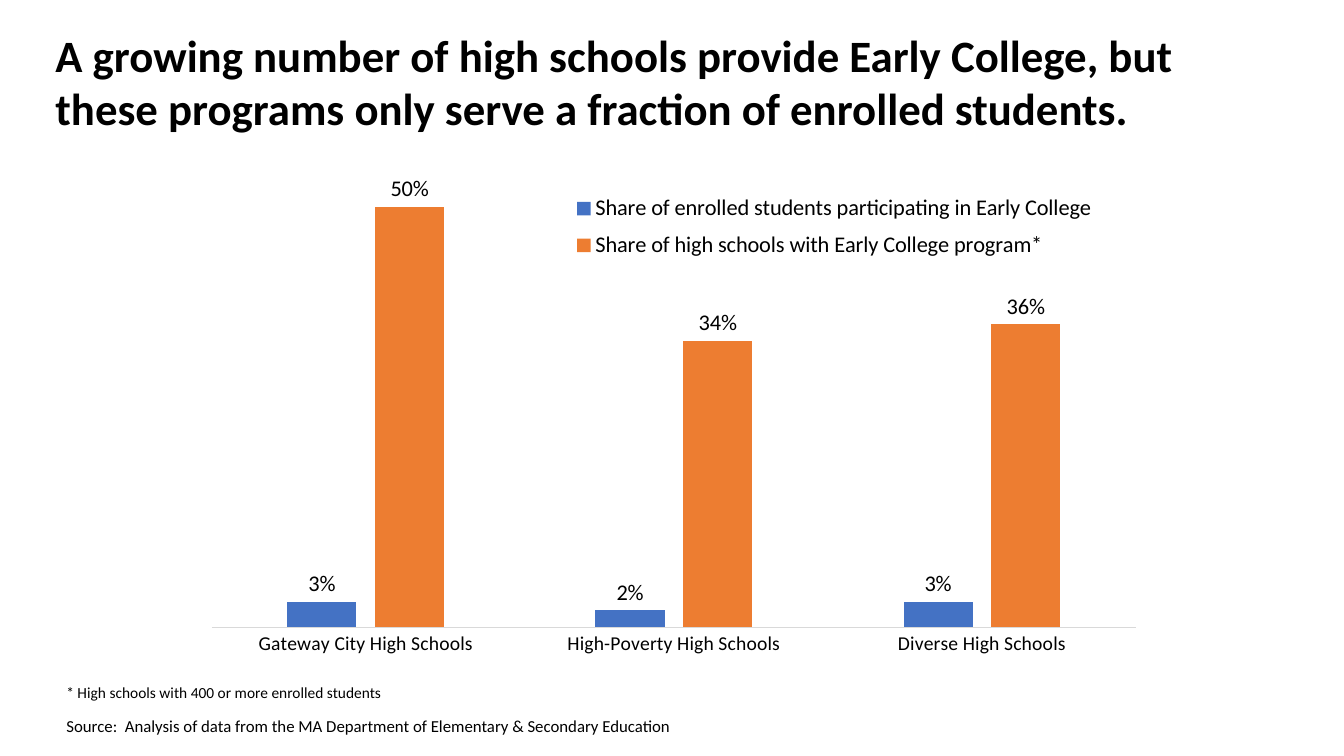
from lxml import etree
from pptx import Presentation
from pptx.chart.data import CategoryChartData
from pptx.dml.color import RGBColor
from pptx.enum.chart import XL_CHART_TYPE, XL_LABEL_POSITION, XL_LEGEND_POSITION, XL_TICK_MARK
from pptx.enum.text import MSO_ANCHOR, MSO_AUTO_SIZE, PP_ALIGN
from pptx.oxml.ns import qn
from pptx.util import Inches, Pt

FONT = "Calibri"
COLORS = {"text": "000000", "axis": "D9D9D9", "students": "4472C4", "schools": "ED7D31"}

TITLE = ("A growing number of high schools provide Early College, but "
         "these programs only serve a fraction of enrolled students.")
SCHOOL_GROUPS = ["Gateway City High Schools", "High-Poverty High Schools", "Diverse High Schools"]
SHARES = [
    ("Share of enrolled students participating in Early College", "students", (0.03, 0.02, 0.03)),
    ("Share of high schools with Early College program*", "schools", (0.5, 0.34, 0.36)),
]
NOTES = [  # text, size, left, top, width, height
    ("* High schools with 400 or more enrolled students", 11, 0.56, 6.73, 3.4, 0.28),
    ("Source:  Analysis of data from the MA Department of Elementary & Secondary Education",
     12, 0.56, 7.05, 6.22, 0.3),
]
TITLE_BOX = (0.45, 0.22, 11.72, 1.21)
CHART_BOX = (1.93, 0.81, 9.47, 6.87)
PLOT_LAYOUT = {"layoutTarget": "inner", "xMode": "edge", "yMode": "edge",
               "x": 0.018, "y": 0.059, "w": 0.968, "h": 0.729}
LEGEND_LAYOUT = {"xMode": "edge", "yMode": "edge", "x": 0.39, "y": 0.15, "w": 0.56, "h": 0.12}


def rgb(name):
    return RGBColor.from_string(COLORS[name])


def set_font(font, size, bold=False):
    for attribute, value in {"name": FONT, "size": Pt(size), "bold": bold}.items():
        setattr(font, attribute, value)
    font.color.rgb = rgb("text")


def set_layout(parent, position, values):
    """Give a chart part a manual layout, as fractions of the chart."""
    for previous in parent.findall(qn("c:layout")):
        parent.remove(previous)
    layout = etree.Element(qn("c:layout"))
    manual = etree.SubElement(layout, qn("c:manualLayout"))
    for tag, value in values.items():
        etree.SubElement(manual, qn(f"c:{tag}")).set("val", str(value))
    parent.insert(position, layout)


def add_title(slide):
    title = slide.shapes.title
    title.left, title.top, title.width, title.height = map(Inches, TITLE_BOX)
    frame = title.text_frame
    frame.text = TITLE
    frame.word_wrap = True
    frame.auto_size = MSO_AUTO_SIZE.NONE
    frame.vertical_anchor = MSO_ANCHOR.TOP
    paragraph = frame.paragraphs[0]
    paragraph.alignment = PP_ALIGN.LEFT
    paragraph.line_spacing = 1.0
    set_font(paragraph.runs[0].font, 32, bold=True)


def add_shares_chart(slide):
    shares = CategoryChartData(number_format="0%")
    shares.categories = SCHOOL_GROUPS
    for name, _, values in SHARES:
        shares.add_series(name, values)
    chart = slide.shapes.add_chart(
        XL_CHART_TYPE.COLUMN_CLUSTERED, *map(Inches, CHART_BOX), shares).chart
    set_font(chart.font, 10)
    chart.has_title = False

    columns = chart.plots[0]
    columns.gap_width, columns.overlap = 219, -27
    columns.vary_by_categories = False
    for series, (_, color, _) in zip(columns.series, SHARES):
        series.format.fill.solid()
        series.format.fill.fore_color.rgb = rgb(color)
        labels = series.data_labels
        for attribute, value in {"show_value": True, "number_format": "0%",
                                 "number_format_is_linked": False,
                                 "position": XL_LABEL_POSITION.OUTSIDE_END}.items():
            setattr(labels, attribute, value)
        set_font(labels.font, 16)

    groups = chart.category_axis
    groups.major_tick_mark = groups.minor_tick_mark = XL_TICK_MARK.NONE
    groups.format.line.color.rgb = rgb("axis")
    groups.format.line.width = Pt(0.75)
    set_font(groups.tick_labels.font, 14)

    percent = chart.value_axis
    percent.minimum_scale, percent.maximum_scale = 0, 0.6
    percent.has_major_gridlines = False
    percent.visible = False

    chart.has_legend = True
    legend = chart.legend
    legend.position = XL_LEGEND_POSITION.BOTTOM
    legend.include_in_layout = False
    set_font(legend.font, 16)

    set_layout(legend._element, 1, LEGEND_LAYOUT)
    set_layout(chart._chartSpace.chart.plotArea, 0, PLOT_LAYOUT)


def add_note(slide, text, size, *box):
    frame = slide.shapes.add_textbox(*map(Inches, box)).text_frame
    frame.word_wrap = False
    frame.text = text
    set_font(frame.paragraphs[0].runs[0].font, size)


def main():
    deck = Presentation()
    deck.slide_width, deck.slide_height = Inches(13.33), Inches(7.5)
    slide = deck.slides.add_slide(deck.slide_layouts[5])
    add_title(slide)
    add_shares_chart(slide)
    for note in NOTES:
        add_note(slide, *note)
    deck.save("out.pptx")


if __name__ == "__main__":
    main()
